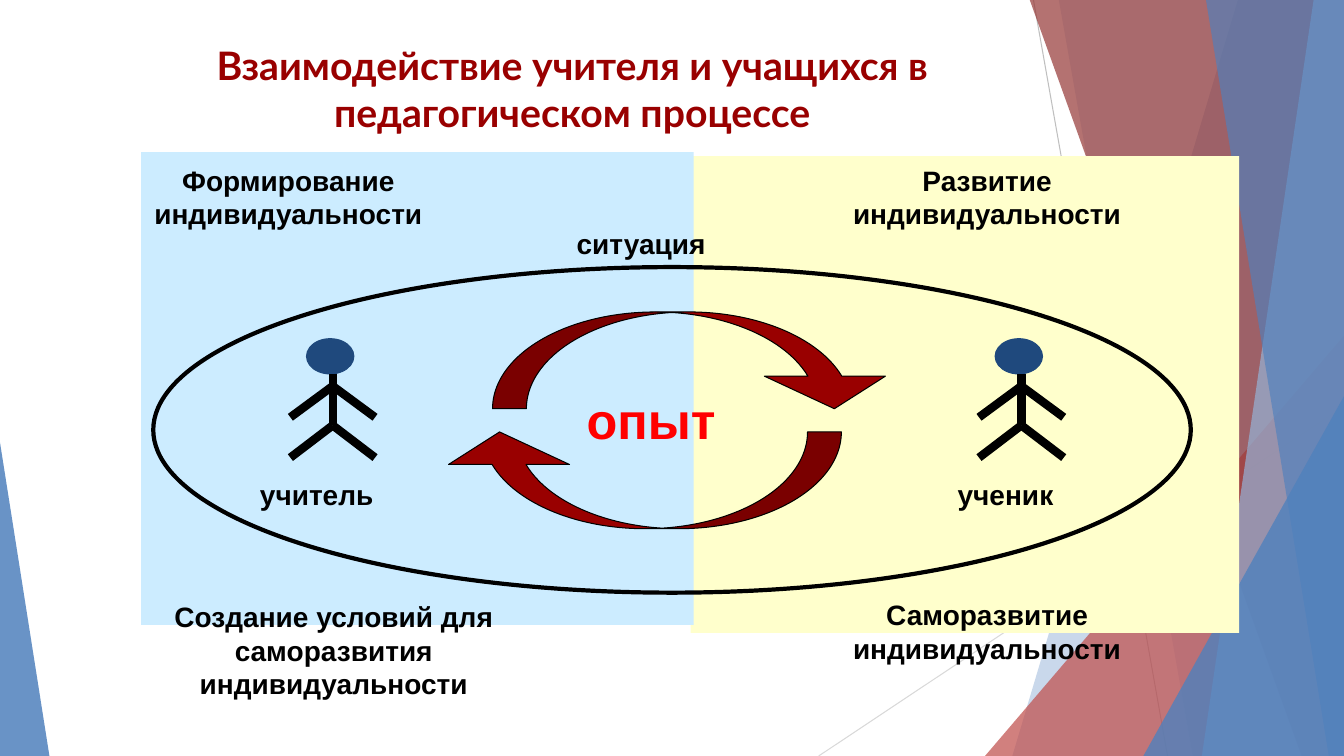
from pptx import Presentation
from pptx import util as u
from pptx.dml.color import RGBColor
from pptx.enum import shapes, text
from pptx.oxml import ns
from lxml import etree

WIDTH, HEIGHT = 13.33, 7.5
BLACK = RGBColor(0x00, 0x00, 0x00)
RED = RGBColor(0xFF, 0x00, 0x00)
DARK_RED = RGBColor(0x99, 0x00, 0x00)
NAVY = RGBColor(0x1F, 0x49, 0x7D)
YELLOW = RGBColor(0xFF, 0xFF, 0xCC)
LIGHT_BLUE = RGBColor(0xCC, 0xEC, 0xFF)
BLUE = RGBColor(0x4F, 0x81, 0xBD)
PALE_BLUE = RGBColor(0x95, 0xB3, 0xD7)
BRICK = RGBColor(0xC0, 0x50, 0x4D)
DARK_BRICK = RGBColor(0x95, 0x37, 0x35)
GREY = RGBColor(0xBF, 0xBF, 0xBF)
LIGHT_GREY = RGBColor(0xD9, 0xD9, 0xD9)
SHAPE = shapes.MSO_SHAPE


class Board:
    """Holds the style and the slide; canvas is the slide or the open group."""

    font, size = "Arial", 20

    def __init__(self, slide):
        self.slide = slide
        self.canvas = slide.shapes

    def open_group(self):
        self.canvas = self.slide.shapes.add_group_shape().shapes

    def close_group(self):
        self.canvas = self.slide.shapes

    def paint(self, shape, fill=None, line=None, weight=0.75, opacity=100):
        shape.shadow.inherit = False
        if fill is None:
            shape.fill.background()
        else:
            shape.fill.solid()
            shape.fill.fore_color.rgb = fill
        if opacity < 100:
            color = shape._element.spPr.find(".//" + ns.qn("a:srgbClr"))
            etree.SubElement(color, ns.qn("a:alpha")).set("val", str(opacity * 1000))
        if line is None:
            shape.line.fill.background()
        else:
            shape.line.color.rgb = line
            shape.line.width = u.Pt(weight)
        return shape

    def shape(self, kind, box, adjust=(), **style):
        shape = self.canvas.add_shape(kind, *map(u.Inches, box))
        for index, value in enumerate(adjust):
            shape.adjustments[index] = value
        return self.paint(shape, **style)

    def line(self, start, end, color, weight):
        line = self.canvas.add_connector(
            shapes.MSO_CONNECTOR.STRAIGHT, *map(u.Inches, (*start, *end)))
        line.line.color.rgb = color
        line.line.width = u.Pt(weight)
        etree.SubElement(line._element.spPr, ns.qn("a:effectLst"))

    def ribbon(self, top_x, bottom_x, fill, opacity):
        """Full-height band between a slanted left edge and the slide's right edge."""
        top = u.Inches(-0.01)
        right, bottom = u.Inches(WIDTH), u.Inches(HEIGHT)
        outline = self.canvas.build_freeform(u.Inches(top_x), top)
        outline.add_line_segments(
            [(right, top), (right, bottom), (u.Inches(bottom_x), bottom)], close=True)
        self.paint(outline.convert_to_shape(), fill, opacity=opacity)

    def label(self, words, box, wrap=False, center=False, color=BLACK, size=size, font=font):
        frame = self.canvas.add_textbox(*map(u.Inches, box)).text_frame
        frame.word_wrap = wrap
        frame.auto_size = text.MSO_AUTO_SIZE.SHAPE_TO_FIT_TEXT
        frame.text = words
        for paragraph in frame.paragraphs:
            paragraph.alignment = text.PP_ALIGN.CENTER if center else text.PP_ALIGN.LEFT
            for run in paragraph.runs:
                run.font.name, run.font.size = font, u.Pt(size)
                run.font.bold, run.font.color.rgb = True, color

    def person(self, x):
        """Stick figure whose spine stands at x."""
        neck, shoulder, hip, reach = 3.71, 3.83, 4.22, 0.42
        self.open_group()
        self.shape(SHAPE.OVAL, (x - 0.26, 3.36, 0.47, 0.35), fill=NAVY, line=NAVY)
        self.line((x, neck), (x, hip), BLACK, 6)
        for joint, limb_end in ((hip, 4.54), (shoulder, 4.14)):
            for side in (reach, -reach):
                self.line((x, joint), (x + side, limb_end), BLACK, 6)
        self.close_group()

    def cycle_arrow(self, left, top, flip):
        arrow = self.shape(SHAPE.CURVED_RIGHT_ARROW, (left, top, 0.96, 3.99),
                           (0.35, 1.25, 0.336), fill=DARK_RED, line=BLACK)
        arrow.rotation = 90
        arrow._element.spPr.find(ns.qn("a:xfrm")).set(flip, "1")


def main():
    deck = Presentation()
    deck.slide_width, deck.slide_height = u.Inches(WIDTH), u.Inches(HEIGHT)
    board = Board(deck.slides.add_slide(deck.slide_layouts[6]))

    # Faceted backdrop
    board.open_group()
    board.line((10.25, 0), (11.58, HEIGHT), GREY, 0.75)
    board.line((WIDTH, 4.03), (8.12, HEIGHT), LIGHT_GREY, 0.75)
    board.ribbon(12.28, 10.04, BLUE, 30)
    board.ribbon(10.5, 11.83, BLUE, 20)
    board.shape(SHAPE.ISOSCELES_TRIANGLE, (9.77, 3.33, 3.56, 4.17), (1,),
                fill=BRICK, opacity=72)
    board.ribbon(10.21, 12.91, DARK_BRICK, 70)
    board.ribbon(13.03, 11.92, PALE_BLUE, 70)
    board.ribbon(11.96, 13.18, BLUE, 65)
    board.shape(SHAPE.ISOSCELES_TRIANGLE, (11.34, 3.93, 1.99, 3.57), (1,),
                fill=BLUE, opacity=80)
    board.shape(SHAPE.ISOSCELES_TRIANGLE, (0, 4.39, 0.49, 3.11), (0,),
                fill=BLUE, opacity=85)
    board.close_group()

    # Pupil and teacher halves
    board.shape(SHAPE.RECTANGLE, (6.85, 1.55, 5.44, 4.73), fill=YELLOW)
    board.shape(SHAPE.RECTANGLE, (1.4, 1.51, 5.48, 4.69), fill=LIGHT_BLUE)

    # Title and corner labels
    board.label("Взаимодействие учителя и учащихся в педагогическом процессе",
                (0.79, 0.36, 9.77, 1.03), wrap=True, center=True,
                color=DARK_RED, size=28, font="Lato")
    board.label("Формирование\nиндивидуальности", (1.42, 1.57, 2.88, 0.77), center=True)
    board.label("Развитие\nиндивидуальности", (8.35, 1.57, 2.88, 0.77), center=True)
    board.label("Саморазвитие\nиндивидуальности", (8.35, 5.88, 2.88, 0.77),
                wrap=True, center=True)
    board.label("Создание условий для саморазвития\nиндивидуальности",
                (1, 5.9, 4.62, 1.11), wrap=True, center=True)

    # Situation: teacher and pupil exchanging experience
    board.shape(SHAPE.OVAL, (1.52, 2.65, 10.29, 3.23), line=BLACK, weight=3)
    for spine in (3.3, 10.13):
        board.person(spine)
    board.cycle_arrow(6.4, 1.58, "flipV")
    board.label("опыт", (5.72, 3.81, 2.21, 0.7), wrap=True, color=RED, size=36)
    board.cycle_arrow(5.87, 2.77, "flipH")
    board.label("учитель", (2.48, 4.69, 1.34, 0.44))
    board.label("ученик", (9.4, 4.69, 1.16, 0.44))
    board.label("ситуация", (5.62, 2.2, 1.49, 0.44))

    deck.save("out.pptx")


if __name__ == "__main__":
    main()
